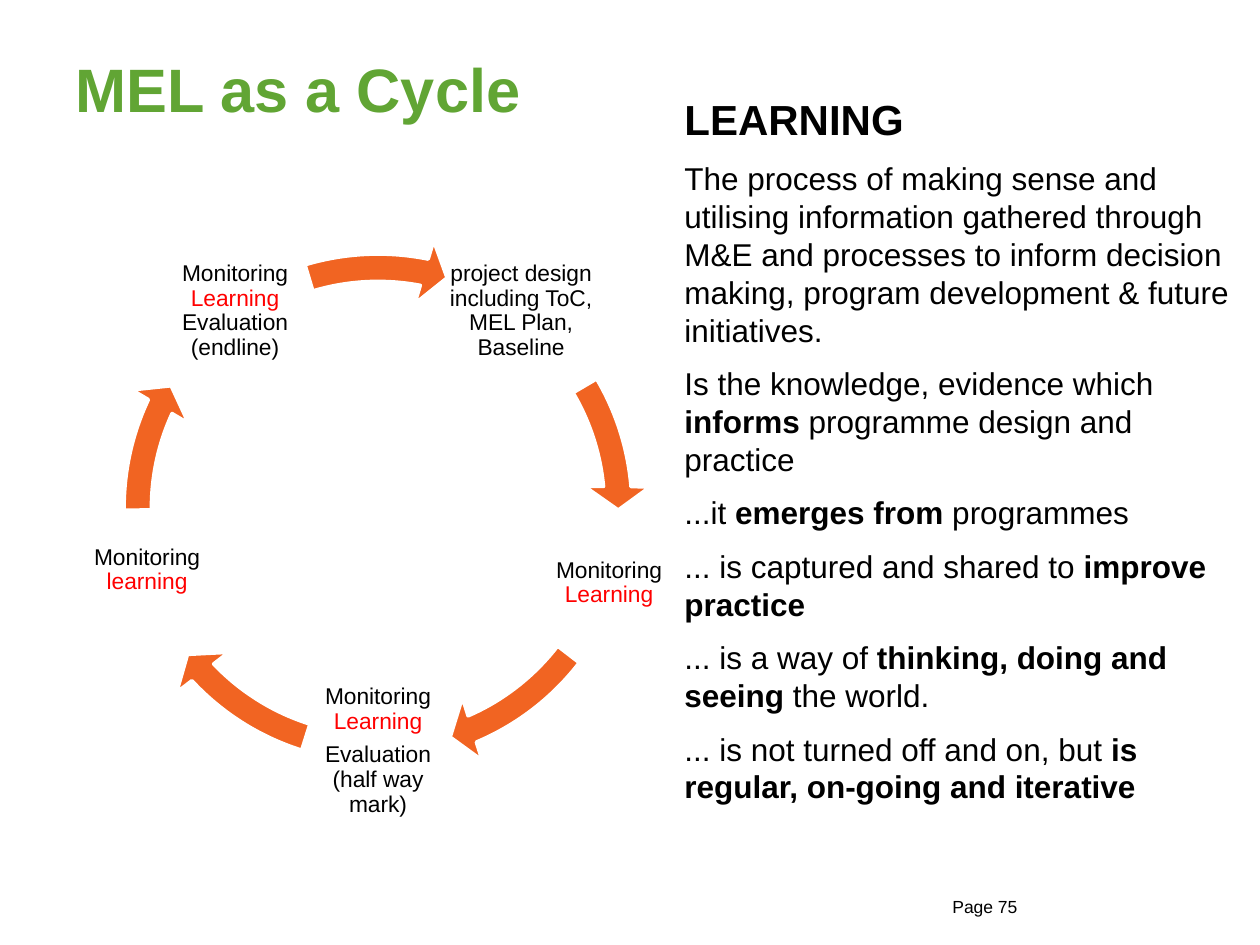
import math
from dataclasses import dataclass

from pptx import Presentation
from pptx import util as u
from pptx.dml.color import RGBColor
from pptx.enum import shapes, text

EMU_PER_PX = 914400 / 126


@dataclass(frozen=True)
class Theme:
    font: str = "Arial"
    ink: str = "000000"
    title_green: str = "61A534"
    learning_red: str = "FF0000"
    arrow_orange: str = "F16422"
    white: str = "FFFFFF"
    title_size: int = 35
    heading_size: int = 24
    body_size: int = 18
    cycle_size: int = 13
    page_size: int = 10


THEME = Theme()


def px(length):
    return u.Emu(round(length * EMU_PER_PX))


def add_run(paragraph, words, size, color=THEME.ink, bold=False):
    """Add words to a paragraph; a line feed becomes a line break."""
    for index, line in enumerate(words.split("\n")):
        if index:
            paragraph.add_line_break()
        if not line:
            continue
        run = paragraph.add_run()
        run.text = line
        run.font.name = THEME.font
        run.font.size = u.Pt(size)
        run.font.bold = bold
        run.font.color.rgb = RGBColor.from_string(color)


class SlideBuilder:
    def __init__(self, slide, theme):
        self.slide = slide
        self.theme = theme

    def text_box(self, left, top, width, height, paragraphs, size, *,
                 align=text.PP_ALIGN.LEFT, anchor=text.MSO_ANCHOR.TOP,
                 inset=None, line_spacing=None, before=0, after=0):
        """Place paragraphs, each a list of (words, run format) pairs."""
        box = self.slide.shapes.add_textbox(px(left), px(top), px(width), px(height))
        frame = box.text_frame
        frame.word_wrap = True
        frame.vertical_anchor = anchor
        if inset is not None:
            frame.margin_left = frame.margin_right = px(inset)
            frame.margin_top = frame.margin_bottom = px(inset)
        for index, runs in enumerate(paragraphs):
            paragraph = frame.add_paragraph() if index else frame.paragraphs[0]
            paragraph.alignment = align
            paragraph.line_spacing = line_spacing
            paragraph.space_before = u.Pt(before if index else 0)
            paragraph.space_after = u.Pt(after)
            for words, style in runs:
                add_run(paragraph, words, **{"size": size, **style})

    def stage(self, center_x, center_y, side, paragraphs):
        self.text_box(center_x - side // 2, center_y - side // 2, side, side,
                      paragraphs, self.theme.cycle_size,
                      align=text.PP_ALIGN.CENTER, anchor=text.MSO_ANCHOR.MIDDLE,
                      inset=1, line_spacing=0.9, after=5)

    def cycle_arrow(self, center_x, center_y, diameter, start, end):
        """Draw an arc arrow between two angles in degrees, clockwise from east."""
        arrow = self.slide.shapes.add_shape(
            shapes.MSO_SHAPE.CIRCULAR_ARROW,
            px(center_x - diameter // 2), px(center_y - diameter // 2),
            px(diameter), px(diameter))
        arrow.shadow.inherit = False
        arrow.fill.solid()
        arrow.fill.fore_color.rgb = RGBColor.from_string(self.theme.arrow_orange)
        arrow.line.color.rgb = RGBColor.from_string(self.theme.white)
        arrow.line.width = u.Pt(2)
        # Angles are stored in 60000ths of a degree, adjustments in 100000ths.
        values = (0.05, 5.6 * 0.6, end * 0.6, start * 0.6, 0.06)
        for index, value in enumerate(values):
            arrow.adjustments[index] = value


PLAIN = {}
BOLD = {"bold": True}
RED = {"color": THEME.learning_red}

# Stage paragraphs, vertical shift in px, start and end angle of the next arrow.
STAGES = [
    ([[("project design including ToC, MEL Plan, Baseline", PLAIN)]],
     0, 329.44, 354.89),
    ([[("Monitoring\n", PLAIN), ("Learning", RED)]],
     0, 37.56, 66.91),
    ([[("Monitoring\n", PLAIN), ("Learning", RED)],
      [("Evaluation (half way mark)", PLAIN)]],
     0, 107.49, 136.85),
    ([[("Monitoring ", PLAIN), ("learning", RED)]],
     -13, 179.51, 204.97),
    ([[("Monitoring ", PLAIN), ("Learning\n", RED),
       ("Evaluation\n(endline)", PLAIN)]],
     0, 253.3, 281.1),
]

LEARNING = [
    [("LEARNING", {"bold": True, "size": THEME.heading_size})],
    [("The process of making sense and utilising information gathered through "
      "M&E and processes to inform decision making, program development & "
      "future initiatives.", PLAIN)],
    [("Is the knowledge, evidence which ", PLAIN), ("informs", BOLD),
     (" programme design and practice", PLAIN)],
    [("...it ", PLAIN), ("emerges from", BOLD), (" programmes", PLAIN)],
    [("... is captured and shared to ", PLAIN), ("improve practice", BOLD)],
    [("... is a way of ", PLAIN), ("thinking, doing and seeing ", BOLD),
     ("the world.", PLAIN)],
    [("... is not turned off and on, but ", PLAIN),
     ("is regular, on-going and iterative", BOLD)],
]


def add_cycle(builder):
    center_x, center_y, radius = 378, 508, 243
    step = 360 / len(STAGES)
    for index, (paragraphs, shift, start, end) in enumerate(STAGES):
        angle = math.radians(-54 + index * step)
        builder.stage(round(center_x + radius * math.cos(angle)),
                      round(center_y + radius * math.sin(angle)) + shift,
                      146, paragraphs)
        builder.cycle_arrow(center_x, center_y, 546, start, end)


def main():
    presentation = Presentation()
    presentation.slide_width = px(1260)
    presentation.slide_height = px(945)
    slide = presentation.slides.add_slide(presentation.slide_layouts[6])
    builder = SlideBuilder(slide, THEME)

    builder.text_box(940, 890, 169, 23, [[("Page 75", PLAIN)]], THEME.page_size)
    builder.text_box(63, 38, 1134, 100,
                     [[("MEL as a Cycle", {"bold": True, "color": THEME.title_green})]],
                     THEME.title_size, anchor=text.MSO_ANCHOR.MIDDLE)
    add_cycle(builder)
    builder.text_box(672, 87, 583, 662, LEARNING, THEME.body_size, before=9)

    presentation.save("out.pptx")


if __name__ == "__main__":
    main()
